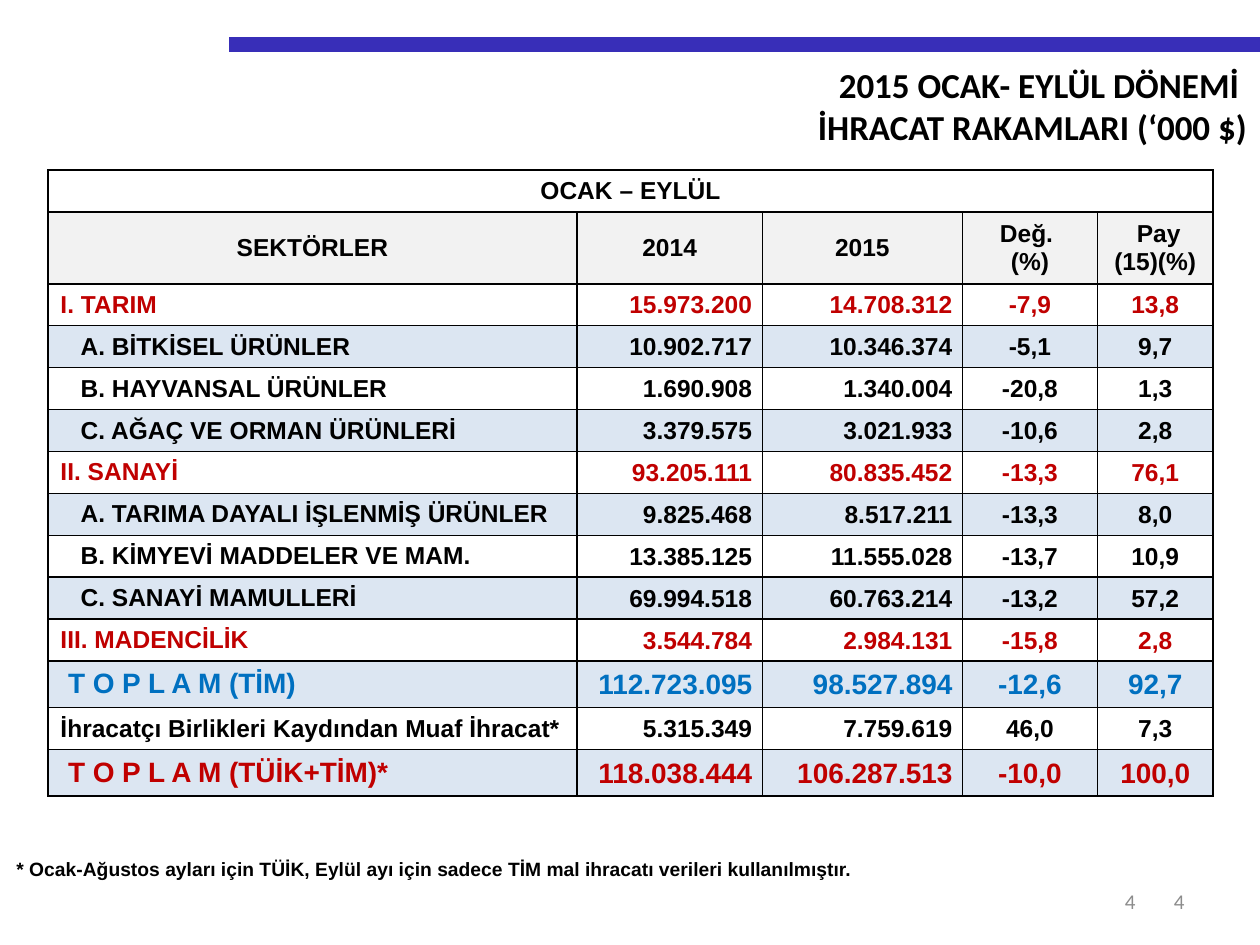
from dataclasses import dataclass

from lxml import etree
from pptx import Presentation
from pptx import util as u
from pptx.dml.color import RGBColor
from pptx.enum import shapes, text
from pptx.oxml.ns import qn

HUES = {"black": "000000", "red": "C00000", "blue": "0070C0", "gray": "8C8C8C",
        "bar": "382EB8", "white": "FFFFFF", "head": "F2F2F2", "band": "DCE6F2"}
LEFT, MID, RIGHT = text.PP_ALIGN.LEFT, text.PP_ALIGN.CENTER, text.PP_ALIGN.RIGHT


@dataclass
class Style:
    size: float = 14
    hue: str = "black"
    font: str = "Arial"
    bold: bool = True


@dataclass
class Row:
    name: str
    nums: str
    hue: str = "black"
    size: float = 14
    indent: float = 0


SUB, SUM = 0.16, 0.06
ROWS = [
    Row("I. TARIM", "15.973.200 14.708.312 -7,9 13,8", "red"),
    Row("A. BİTKİSEL ÜRÜNLER", "10.902.717 10.346.374 -5,1 9,7", indent=SUB),
    Row("B. HAYVANSAL ÜRÜNLER", "1.690.908 1.340.004 -20,8 1,3", indent=SUB),
    Row("C. AĞAÇ VE ORMAN ÜRÜNLERİ", "3.379.575 3.021.933 -10,6 2,8", indent=SUB),
    Row("II. SANAYİ", "93.205.111 80.835.452 -13,3 76,1", "red"),
    Row("A. TARIMA DAYALI İŞLENMİŞ ÜRÜNLER", "9.825.468 8.517.211 -13,3 8,0", indent=SUB),
    Row("B. KİMYEVİ MADDELER VE MAM.", "13.385.125 11.555.028 -13,7 10,9", indent=SUB),
    Row("C. SANAYİ MAMULLERİ", "69.994.518 60.763.214 -13,2 57,2", indent=SUB),
    Row("III. MADENCİLİK", "3.544.784 2.984.131 -15,8 2,8", "red"),
    Row("T O P L A M (TİM)", "112.723.095 98.527.894 -12,6 92,7", "blue", 16, SUM),
    Row("İhracatçı Birlikleri Kaydından Muaf İhracat*", "5.315.349 7.759.619 46,0 7,3"),
    Row("T O P L A M (TÜİK+TİM)*", "118.038.444 106.287.513 -10,0 100,0", "red", 16, SUM),
]
HEADS = ["SEKTÖRLER", "2014", "2015", "Değ. \n(%)", " Pay\n(15)(%)"]
COLS = [4.2, 1.47, 1.59, 1.07, 0.92]
TALL, HEAD, TOTAL = 4.97, 0.57, 0.37


def color(name: str) -> RGBColor:
    return RGBColor.from_string(HUES[name])


def write(frame, words: str, style: Style, align) -> None:
    for i, line in enumerate(words.split("\n")):
        para = frame.paragraphs[0] if i == 0 else frame.add_paragraph()
        para.alignment = align
        run = para.add_run()
        run.text = line
        font = run.font
        font.size, font.name, font.bold = u.Pt(style.size), style.font, style.bold
        font.color.rgb = color(style.hue)


def edge(cell) -> None:
    props = cell._tc.get_or_add_tcPr()
    for tag in ("a:lnL", "a:lnR", "a:lnT", "a:lnB"):
        line = etree.SubElement(props, qn(tag), w=str(u.Pt(1)))
        fill = etree.SubElement(line, qn("a:solidFill"))
        etree.SubElement(fill, qn("a:srgbClr"), val=HUES["black"])


def paint(cell, fill: str) -> None:
    edge(cell)
    cell.fill.solid()
    cell.fill.fore_color.rgb = color(fill)
    cell.vertical_anchor = text.MSO_ANCHOR.MIDDLE


def pad(cell, right: float) -> None:
    cell.margin_left = cell.margin_top = u.Inches(0.01)
    cell.margin_right, cell.margin_bottom = u.Inches(right), 0


def add_bar(slide) -> None:
    y = u.Inches(0.35)
    bar = slide.shapes.add_connector(shapes.MSO_CONNECTOR.STRAIGHT,
                                     u.Inches(1.82), y, u.Inches(10), y)
    bar.line.color.rgb = color("bar")
    bar.line.width = u.Pt(8.5)
    etree.SubElement(bar._element.spPr, qn("a:effectLst"))


def add_title(slide) -> None:
    title = slide.shapes.title
    title.left, title.top = u.Inches(1.06), u.Inches(0.45)
    title.width, title.height = u.Inches(8.94), u.Inches(0.77)
    frame = title.text_frame
    frame.auto_size = text.MSO_AUTO_SIZE.NONE
    frame.vertical_anchor = text.MSO_ANCHOR.TOP
    write(frame, "2015 OCAK- EYLÜL DÖNEMİ \nİHRACAT RAKAMLARI (‘000 $)",
          Style(20, font="Calibri"), RIGHT)


def add_grid(slide) -> None:
    grid = slide.shapes.add_table(len(ROWS) + 2, len(COLS), u.Inches(0.38), u.Inches(1.35),
                                  u.Inches(sum(COLS)), u.Inches(TALL)).table
    for col, wide in zip(grid.columns, COLS):
        col.width = u.Inches(wide)

    # Totals and the header are taller; the other rows share the rest
    totals = sum(row.size > 14 for row in ROWS)
    base = (TALL - HEAD - totals * TOTAL) / (len(ROWS) + 1 - totals)
    highs = [base, HEAD] + [TOTAL if row.size > 14 else base for row in ROWS]
    for line, high in zip(grid.rows, highs):
        line.height = u.Inches(high)

    # Heading rows
    for c, head in enumerate(HEADS):
        paint(grid.cell(0, c), "white")
        cell = grid.cell(1, c)
        paint(cell, "head")
        write(cell.text_frame, head, Style(), MID)
    grid.cell(0, 0).merge(grid.cell(0, len(COLS) - 1))
    write(grid.cell(0, 0).text_frame, "OCAK – EYLÜL", Style(), MID)

    # Sector rows, every second one shaded
    for r, row in enumerate(ROWS):
        style = Style(row.size, row.hue)
        for c, words in enumerate([row.name, *row.nums.split()]):
            cell = grid.cell(r + 2, c)
            paint(cell, "band" if r % 2 else "white")
            if c == 0:
                cell.margin_left = u.Inches(0.1 + row.indent)
                cell.margin_right = u.Inches(0.05)
            else:
                pad(cell, 0.08 if c < 3 else 0.01)
            write(cell.text_frame, words, style, LEFT if c == 0 else RIGHT if c < 3 else MID)


def add_note(slide) -> None:
    grid = slide.shapes.add_table(1, 1, u.Inches(0.12), u.Inches(6.74),
                                  u.Inches(7.4), u.Inches(0.31)).table
    cell = grid.cell(0, 0)
    cell.fill.background()
    cell.vertical_anchor = text.MSO_ANCHOR.MIDDLE
    pad(cell, 0.01)
    write(cell.text_frame, "* Ocak-Ağustos ayları için TÜİK, Eylül ayı için sadece "
          "TİM mal ihracatı verileri kullanılmıştır.", Style(11), LEFT)


def add_page(slide, left: float, wide: float) -> None:
    box = slide.shapes.add_textbox(u.Inches(left), u.Inches(6.95), u.Inches(wide), u.Inches(0.4))
    frame = box.text_frame
    frame.word_wrap = True
    frame.vertical_anchor = text.MSO_ANCHOR.MIDDLE
    write(frame, "4", Style(12, "gray", "Calibri", False), RIGHT)


def main() -> None:
    deck = Presentation()
    deck.slide_width, deck.slide_height = u.Inches(10), u.Inches(7.5)
    slide = deck.slides.add_slide(deck.slide_layouts[5])
    add_bar(slide)
    add_title(slide)
    add_grid(slide)
    add_note(slide)
    for left, wide in ((7.17, 2.33), (7.01, 2.1)):
        add_page(slide, left, wide)
    deck.save("out.pptx")


if __name__ == "__main__":
    main()
